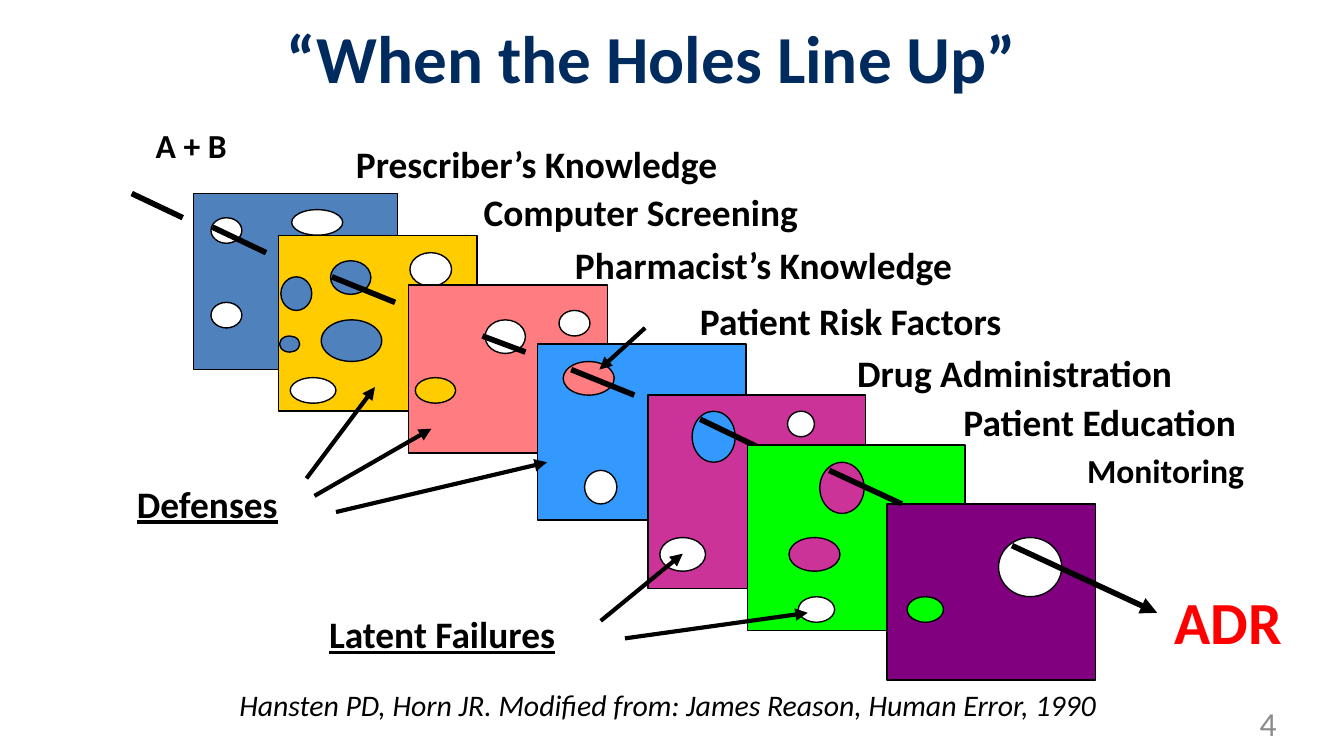
from lxml import etree
from pptx import Presentation
from pptx import util as u
from pptx.dml.color import RGBColor
from pptx.enum import shapes, text
from pptx.oxml.ns import qn

SLIDE_WIDTH = u.Inches(10)
SLIDE_HEIGHT = SLIDE_WIDTH * 9 // 16

BLACK, WHITE = "000000", "FFFFFF"
BLUE, YELLOW, PINK, SKY = "4F81BD", "FFCC00", "FF7C80", "3399FF"
MAGENTA, GREEN, PURPLE = "CC3399", "00FF00", "800080"

TITLE = ("“When the Holes Line Up”", (1, 0.07, 7.7, 0.71))

SLICES = [
    {"color": BLUE, "box": (1.44, 1.44, 1.52, 1.31),
     "holes": [(1.57, 1.62, 0.23, 0.19, WHITE), (1.57, 2.25, 0.23, 0.19, WHITE),
               (2.17, 1.56, 0.38, 0.19, WHITE)],
     "path": (1.58, 1.69, 1.98, 1.88)},
    {"color": YELLOW, "box": (2.07, 1.75, 1.48, 1.31),
     "holes": [(2.46, 1.94, 0.3, 0.25, BLUE), (2.09, 2.06, 0.23, 0.25, BLUE),
               (2.39, 2.38, 0.45, 0.31, BLUE), (2.08, 2.5, 0.15, 0.12, BLUE),
               (3.05, 1.88, 0.31, 0.25, WHITE), (2.16, 2.81, 0.34, 0.19, WHITE)],
     "path": (2.47, 2.06, 2.94, 2.25)},
    {"color": PINK, "box": (3.04, 2.12, 1.48, 1.25),
     "holes": [(3.61, 2.38, 0.3, 0.25, WHITE), (4.16, 2.31, 0.23, 0.19, WHITE),
               (3.09, 2.81, 0.3, 0.19, YELLOW)],
     "path": (3.59, 2.5, 3.91, 2.62)},
    {"color": SKY, "box": (4, 2.56, 1.55, 1.31),
     "holes": [(4.19, 2.69, 0.38, 0.25, PINK), (4.35, 3.5, 0.24, 0.25, WHITE)],
     "path": (4.25, 2.75, 4.72, 2.94)},
    {"color": MAGENTA, "box": (4.82, 2.94, 1.62, 1.44),
     "holes": [(5.15, 3.06, 0.32, 0.38, SKY), (5.86, 3.06, 0.2, 0.19, WHITE),
               (4.91, 4, 0.34, 0.25, WHITE)],
     "path": (5.21, 3.12, 5.75, 3.38)},
    {"color": GREEN, "box": (5.56, 3.31, 1.62, 1.38),
     "holes": [(6.1, 3.44, 0.33, 0.38, MAGENTA), (5.87, 4, 0.38, 0.25, MAGENTA),
               (5.94, 4.44, 0.27, 0.19, WHITE)],
     "path": None},
    {"color": PURPLE, "box": (6.6, 3.75, 1.55, 1.31),
     "holes": [(7.43, 4, 0.47, 0.44, WHITE), (6.75, 4.44, 0.27, 0.19, GREEN)],
     "path": (6.17, 3.5, 6.71, 3.75)},
]
ENTRY_PATH = (0.98, 1.44, 1.36, 1.62)
EXIT_PATH = (7.53, 4.06, 8.61, 4.56)

POINTERS = [
    (4.8, 2.44, 4.46, 2.75),
    (2.28, 3.56, 2.79, 2.88),
    (2.34, 3.69, 3.21, 3.19),
    (2.5, 3.81, 4.07, 3.44),
    (4.47, 4.62, 5.08, 4.12),
    (4.65, 4.75, 6.01, 4.56),
]

LABELS = [
    ("A + B", (1.06, 0.88, 1.14, 0.5), {"size": 18}),
    ("Prescriber’s Knowledge", (2.55, 1, 4.17, 0.44), {}),
    ("Computer Screening", (3.5, 1.36, 3.86, 0.44), {}),
    ("Pharmacist’s Knowledge", (4.18, 1.75, 4.17, 0.44), {}),
    ("Patient Risk Factors", (5.11, 2.17, 3.48, 0.44), {}),
    ("Drug Administration", (6.28, 2.56, 3.16, 0.44), {}),
    ("Patient Education", (7.07, 2.92, 2.77, 0.44), {}),
    ("Monitoring", (7.99, 3.3, 1.97, 0.5), {"size": 18}),
    ("Defenses", (0.92, 3.53, 1.89, 0.44), {"underline": True}),
    ("Latent Failures", (2.35, 4.5, 2.84, 0.44), {"underline": True}),
    ("ADR", (8.64, 4.3, 1.19, 0.64), {"size": 32, "color": "FF0000"}),
    ("Hansten PD, Horn JR. Modified from: James Reason, Human Error, 1990",
     (0.75, 5.06, 8.44, 0.37),
     {"size": 16, "bold": False, "italic": True, "align": text.PP_ALIGN.CENTER}),
    ("4", (7.2, 5.23, 2.3, 0.28),
     {"size": 18, "bold": False, "color": "8C8C8C", "align": text.PP_ALIGN.RIGHT,
      "margin": 0}),
]


def rgb(value):
    return RGBColor.from_string(value)


def inches(values):
    return [u.Inches(value) for value in values]


def write(shape, wording, size=20, color=BLACK, bold=True, italic=False,
          underline=False, align=text.PP_ALIGN.LEFT, margin=None):
    frame = shape.text_frame
    frame.text = wording
    frame.word_wrap = True
    frame.auto_size = text.MSO_AUTO_SIZE.NONE
    frame.vertical_anchor = text.MSO_ANCHOR.TOP
    if margin is not None:
        frame.margin_left = frame.margin_right = u.Inches(margin)
        frame.margin_top = frame.margin_bottom = u.Inches(margin)
    paragraph = frame.paragraphs[0]
    paragraph.alignment = align
    font = paragraph.runs[0].font
    font.name, font.size = "Calibri", u.Pt(size)
    font.bold, font.italic, font.underline = bold, italic, underline
    font.color.rgb = rgb(color)


def add_block(slide, kind, box, color):
    shape = slide.shapes.add_shape(kind, *inches(box))
    shape.shadow.inherit = False
    shape.fill.solid()
    shape.fill.fore_color.rgb = rgb(color)
    shape.line.color.rgb = rgb(BLACK)
    shape.line.width = u.Pt(0.75)


def add_line(slide, points, width=3, arrow=False):
    connector = slide.shapes.add_connector(shapes.MSO_CONNECTOR.STRAIGHT, *inches(points))
    connector.line.color.rgb = rgb(BLACK)
    connector.line.width = u.Pt(width)
    properties = connector._element.spPr
    if arrow:
        etree.SubElement(properties.find(qn("a:ln")), qn("a:tailEnd"), type="triangle")
    etree.SubElement(properties, qn("a:effectLst"))


def main():
    presentation = Presentation()
    presentation.slide_width = SLIDE_WIDTH
    presentation.slide_height = SLIDE_HEIGHT
    slide = presentation.slides.add_slide(presentation.slide_layouts[5])

    wording, box = TITLE
    title = slide.shapes.title
    title.left, title.top, title.width, title.height = inches(box)
    write(title, wording, size=36, color="002B5E", align=text.PP_ALIGN.CENTER)

    add_line(slide, ENTRY_PATH)
    for piece in SLICES:
        add_block(slide, shapes.MSO_SHAPE.RECTANGLE, piece["box"], piece["color"])
        for *hole, color in piece["holes"]:
            add_block(slide, shapes.MSO_SHAPE.OVAL, hole, color)
        if piece["path"]:
            add_line(slide, piece["path"])
    add_line(slide, EXIT_PATH, arrow=True)

    for points in POINTERS:
        add_line(slide, points, width=2.25, arrow=True)
    for wording, box, style in LABELS:
        write(slide.shapes.add_textbox(*inches(box)), wording, **style)

    presentation.save("out.pptx")


if __name__ == "__main__":
    main()
